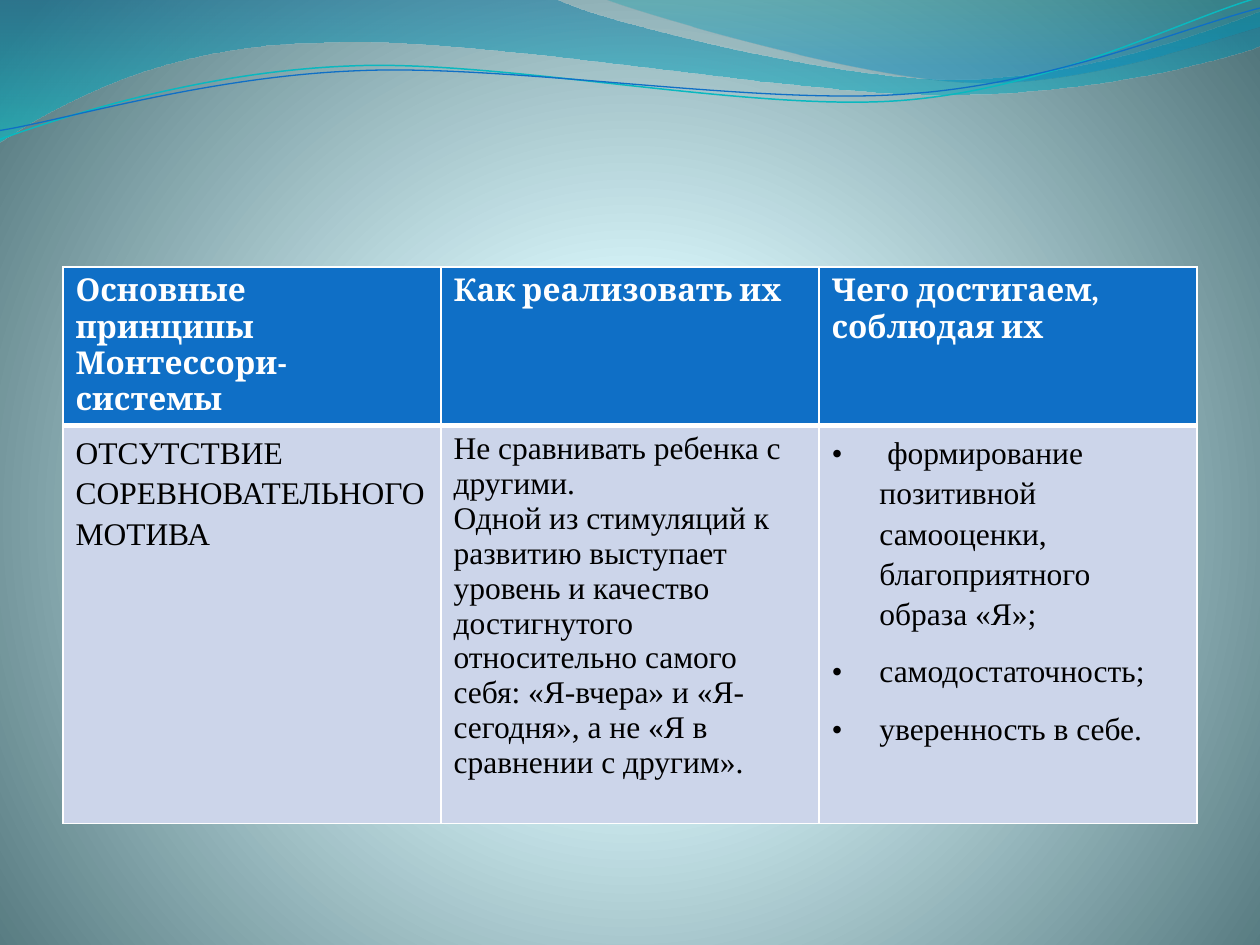
from math import cos, radians, sin

from lxml import etree
from pptx import Presentation
from pptx.dml.color import RGBColor
from pptx.enum.text import PP_ALIGN
from pptx.oxml import parse_xml
from pptx.oxml.ns import qn
from pptx.util import Inches, Pt

LEFT, JUSTIFY = PP_ALIGN.LEFT, PP_ALIGN.JUSTIFY
NAMESPACE = "http://schemas.openxmlformats.org/drawingml/2006/main"
UNITS_PER_INCH = 100
LINE_TILT = -2.7
LINE_CENTER = (4.99, 0.58)

# Each wave: start point, then straight points (2 numbers) or curves (6 numbers)
WAVE_WIDE = [
    (0, -0.01), (4.4, -0.01), (4.76, 0.17, 6.64, 0.63, 7.58, 0.63),
    (8.53, 0.63, 9.58, 0.26, 10, 0.09), (10.01, 0.36),
    (9.83, 0.44, 8.7, 0.76, 7.46, 0.75), (6.22, 0.75, 3.82, 0.28, 2.57, 0.34),
    (1.29, 0.35, 0.46, 0.83, -0.01, 1.13),
]
WAVE_RIGHT = [
    (4.79, -0.01), (5.09, 0.11, 6.82, 0.62, 7.69, 0.65),
    (8.56, 0.69, 9.61, 0.32, 10, 0.21), (10, 0),
]
LINE_TEAL = [
    (0, 1.11), (0.48, 0.93, 1.58, 0.57, 2.77, 0.52),
    (3.95, 0.47, 5.93, 0.89, 7.13, 0.8), (8.33, 0.71, 9.38, 0.15, 9.98, -0.02),
]
LINE_BLUE = [
    (0, 1.04), (0.47, 0.96, 1.64, 0.61, 2.83, 0.56),
    (4.03, 0.51, 5.97, 0.83, 7.17, 0.75), (8.36, 0.67, 9.41, 0.21, 10, 0.06),
]

HEADERS = ["Основные принципы Монтессори-системы", "Как реализовать их",
           "Чего достигаем, соблюдая их"]
PRINCIPLE = ["ОТСУТСТВИЕ СОРЕВНОВАТЕЛЬНОГО МОТИВА"]
METHOD = ["Не сравнивать ребенка с другими. \nОдной из стимуляций к развитию "
          "выступает уровень и качество достигнутого относительно самого себя: "
          "«Я-вчера» и «Я-сегодня», а не «Я в сравнении с другим»."]
RESULTS = [" формирование позитивной самооценки, благоприятного образа «Я»;",
           "самодостаточность;", "уверенность в себе."]

HEADER_FONT = {"name": "Cambria", "size": Pt(18), "bold": True}
BODY_FONT = {"name": "Times New Roman", "size": Pt(18), "bold": False}


def color(hex_value):
    return RGBColor.from_string(hex_value)


def set_values(target, values):
    for name, value in values.items():
        setattr(target, name, value)


def set_gradient(fill, parent, stops, direction):
    """Fill with (position, colour, opacity) stops, all in percent."""
    fill.gradient()
    stop_xml = "".join(
        f'<a:gs pos="{position * 1000}"><a:srgbClr val="{hex_value}">'
        f'<a:alpha val="{opacity * 1000}"/></a:srgbClr></a:gs>'
        for position, hex_value, opacity in stops)
    gradient = parse_xml(f'<a:gradFill xmlns:a="{NAMESPACE}" rotWithShape="1">'
                         f'<a:gsLst>{stop_xml}</a:gsLst>{direction}</a:gradFill>')
    current = next(parent.iter(qn("a:gradFill")))
    current.getparent().replace(current, gradient)


def to_units(segment, tilt):
    """Split a segment into points, turned back by the tilt, in drawing units."""
    angle = radians(-tilt)
    center_x, center_y = LINE_CENTER
    points = []
    for x, y in zip(segment[::2], segment[1::2]):
        across, down = x - center_x, y - center_y
        turned = (center_x + across * cos(angle) - down * sin(angle),
                  center_y + across * sin(angle) + down * cos(angle))
        points.append(tuple(round(value * UNITS_PER_INCH) for value in turned))
    return points


def add_outline(slide, segments, close, tilt=0):
    """Draw a freeform through the end points, then bend its curved parts."""
    parts = [to_units(segment, tilt) for segment in segments]
    ends = [part[-1] for part in parts]
    builder = slide.shapes.build_freeform(*ends[0], scale=Inches(1 / UNITS_PER_INCH))
    builder.add_line_segments(ends[1:], close=close)
    shape = builder.convert_to_shape()
    shape.shadow.inherit = False
    shape.rotation = tilt

    left, top = (min(values) for values in zip(*ends))
    straight_parts = list(shape._element.iter(qn("a:lnTo")))
    for straight, part in zip(straight_parts, parts[1:]):
        if len(part) == 3:
            points = "".join(f'<a:pt x="{x - left}" y="{y - top}"/>' for x, y in part)
            curve = parse_xml(f'<a:cubicBezTo xmlns:a="{NAMESPACE}">{points}'
                              '</a:cubicBezTo>')
            straight.getparent().replace(straight, curve)
    return shape


def add_wave(slide, segments, stops):
    shape = add_outline(slide, segments, True)
    set_gradient(shape.fill, shape._element.spPr, stops,
                 '<a:lin ang="5400000" scaled="1"/>')
    shape.line.fill.background()


def add_wave_line(slide, segments, hex_value, width):
    shape = add_outline(slide, segments, False, LINE_TILT)
    shape.fill.background()
    shape.line.color.rgb = color(hex_value)
    shape.line.width = Pt(width)


def set_borders(cell, widths):
    properties = cell._tc.get_or_add_tcPr()
    for index, (side, width) in enumerate(widths.items()):
        properties.insert(index, parse_xml(
            f'<a:ln{side} xmlns:a="{NAMESPACE}" w="{Pt(width)}"><a:solidFill>'
            f'<a:srgbClr val="FFFFFF"/></a:solidFill></a:ln{side}>'))


def set_bullet(paragraph):
    properties = paragraph._p.get_or_add_pPr()
    properties.set("marL", str(Inches(0.38)))
    properties.set("indent", str(Inches(-0.38)))
    etree.SubElement(properties, qn("a:buFont")).set("typeface", BODY_FONT["name"])
    etree.SubElement(properties, qn("a:buChar")).set("char", "•")
    tabs = etree.SubElement(properties, qn("a:tabLst"))
    tab = etree.SubElement(tabs, qn("a:tab"))
    tab.set("pos", str(Inches(0.5)))
    tab.set("algn", "l")


def fill_cell(cell, texts, font, text_color, fill_color, layout, bullets=False):
    cell.fill.solid()
    cell.fill.fore_color.rgb = color(fill_color)
    frame = cell.text_frame
    for index, text in enumerate(texts):
        paragraph = frame.add_paragraph() if index else frame.paragraphs[0]
        paragraph.text = text
        set_values(paragraph, layout)
        if bullets:
            set_bullet(paragraph)
        for run in paragraph.runs:
            set_values(run.font, font)
            run.font.color.rgb = color(text_color)


def add_principles_table(slide):
    table = slide.shapes.add_table(2, 3, Inches(0.5), Inches(2.12),
                                   Inches(9), Inches(4.4)).table
    table.horz_banding = False
    for row, height in zip(table.rows, (1.24, 3.16)):
        row.height = Inches(height)

    # Header row
    for column, text in enumerate(HEADERS):
        cell = table.cell(0, column)
        fill_cell(cell, [text], HEADER_FONT, "FFFFFF", "0F6FC6", {"alignment": LEFT})
        set_borders(cell, {"L": 1, "R": 1, "T": 1, "B": 3})

    # Body row
    body = [
        (PRINCIPLE, {"alignment": JUSTIFY, "line_spacing": 1.15}, False),
        (METHOD, {"alignment": LEFT}, False),
        (RESULTS, {"alignment": LEFT, "line_spacing": 1.15, "space_after": Pt(10)}, True),
    ]
    for column, (texts, layout, bullets) in enumerate(body):
        cell = table.cell(1, column)
        fill_cell(cell, texts, BODY_FONT, "000000", "CCD5EA", layout, bullets)
        set_borders(cell, {"L": 1, "R": 1, "T": 3, "B": 1})


def main():
    presentation = Presentation()
    presentation.slide_width = Inches(10)
    presentation.slide_height = Inches(7.5)
    slide = presentation.slides.add_slide(presentation.slide_layouts[6])

    # Background
    set_gradient(slide.background.fill, slide._element,
                 [(0, "DEFBFF", 100), (25, "DDFAFF", 100), (100, "52767C", 100)],
                 '<a:path path="circle"><a:fillToRect l="10000" t="110000" '
                 'r="10000" b="100000"/></a:path>')

    # Waves along the top
    add_wave(slide, WAVE_WIDE, [(0, "0074A1", 45), (100, "00C6CF", 55)])
    add_wave(slide, WAVE_RIGHT, [(0, "00A1A9", 30), (80, "008BBF", 45)])
    add_wave_line(slide, LINE_TEAL, "0AB8BF", 0.85)
    add_wave_line(slide, LINE_BLUE, "0F6FC6", 0.75)

    add_principles_table(slide)
    presentation.save("out.pptx")


if __name__ == "__main__":
    main()
